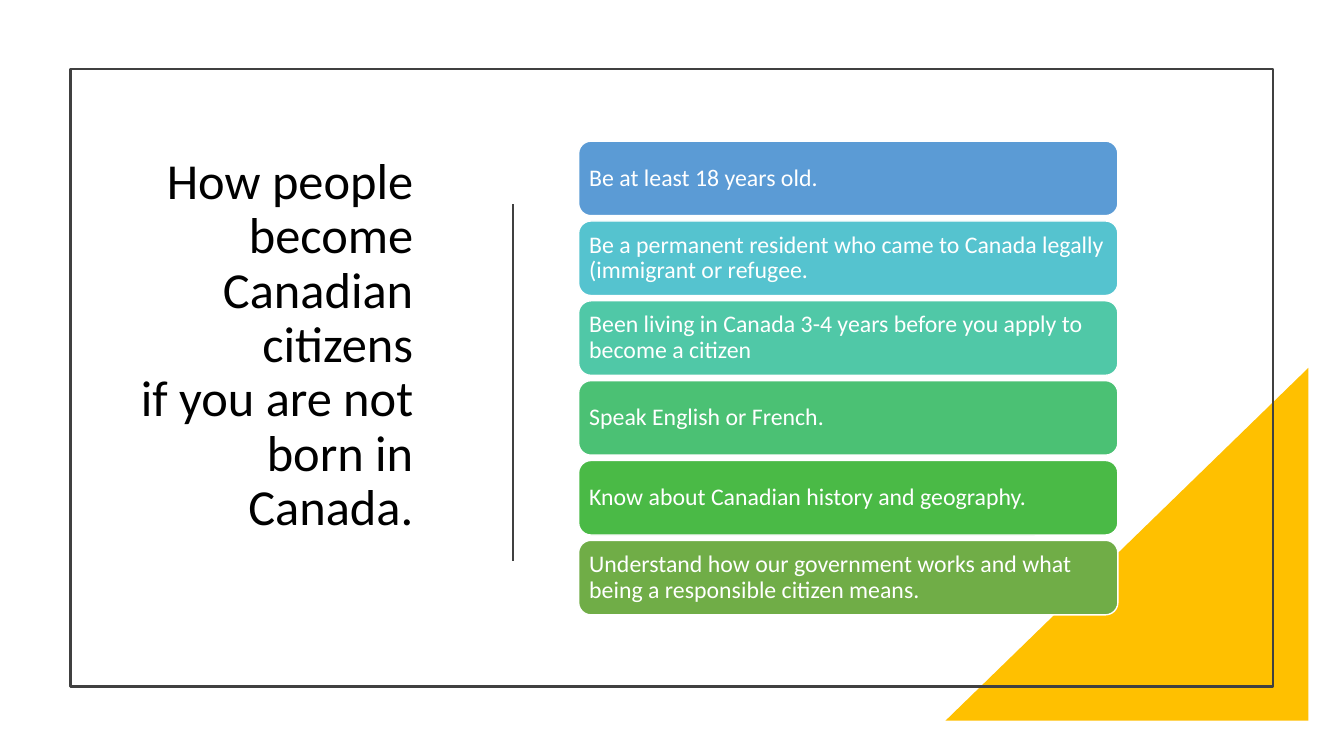
from copy import deepcopy

from pptx import Presentation
from pptx import util as u
from pptx.dml.color import RGBColor
from pptx.enum import shapes, text
from pptx.oxml.ns import qn
from pptx.oxml import parse_xml

DARK = "404040"
WHITE = "FFFFFF"
REQUIREMENTS = [
    ("Be at least 18 years old.", "5B9BD5"),
    ("Be a permanent resident who came to Canada legally (immigrant or refugee.", "55C3CF"),
    ("Been living in Canada 3-4 years before you apply to become a citizen", "50C8A7"),
    ("Speak English or French.", "4BC174"),
    ("Know about Canadian history and geography.", "4ABA46"),
    ("Understand how our government works and what being a responsible citizen means.", "70AD47"),
]


def color(hex_value):
    return RGBColor.from_string(hex_value)


def write(shape, words, size, ink, align, inset=None):
    """Fill a shape with one paragraph; a vertical tab in words breaks the line."""
    frame = shape.text_frame
    frame.word_wrap = True
    frame.auto_size = text.MSO_AUTO_SIZE.NONE
    frame.vertical_anchor = text.MSO_ANCHOR.MIDDLE
    if inset is not None:
        frame.margin_left = frame.margin_right = u.Pt(inset)
        frame.margin_top = frame.margin_bottom = u.Pt(inset)
    para = frame.paragraphs[0]
    para.text = words
    para.alignment = align
    para.line_spacing = 0.9
    for span in para.runs:
        span.font.name = "Calibri"
        span.font.size = u.Pt(size)
        span.font.color.rgb = color(ink)
    for line_break in para._p.findall(qn("a:br")):
        line_break.append(deepcopy(para.runs[0]._r.rPr))


def add_block(page, kind, box, fill=None, line=None, weight=1):
    block = page.shapes.add_shape(kind, *map(u.Pt, box))
    block.shadow.inherit = False
    if fill:
        block.fill.solid()
        block.fill.fore_color.rgb = color(fill)
    else:
        block.fill.background()
    if line:
        block.line.color.rgb = color(line)
        block.line.width = u.Pt(weight)
    else:
        block.line.fill.background()
    return block


def add_backdrop(page, frame_box, corner_box):
    corner = add_block(page, shapes.MSO_SHAPE.RIGHT_TRIANGLE, corner_box, fill="FFC000")
    corner._element.spPr.get_or_add_xfrm().set("flipH", "1")
    add_block(page, shapes.MSO_SHAPE.RECTANGLE, frame_box, line=DARK, weight=1.5)


def add_title(page, box):
    title = page.shapes.title
    title.left, title.top, title.width, title.height = map(u.Pt, box)
    write(title, "How people become Canadian citizens\vif you are not born in Canada.",
          size=36, ink="000000", align=text.PP_ALIGN.RIGHT)


def add_divider(page, x, top, bottom):
    divider = page.shapes.add_connector(
        shapes.MSO_CONNECTOR.STRAIGHT, u.Pt(x), u.Pt(top), u.Pt(x), u.Pt(bottom))
    divider.line.color.rgb = color(DARK)
    divider.line.width = u.Pt(1.5)
    divider._element.spPr.append(parse_xml(
        '<a:effectLst xmlns:a="http://schemas.openxmlformats.org/drawingml/2006/main"/>'))


def add_requirements(page, box, gap=3.75):
    """Stack one rounded bar per requirement, evenly filling the box."""
    left, top, width, height = box
    pitch = (height + gap) / len(REQUIREMENTS)
    for row, (words, fill) in enumerate(REQUIREMENTS):
        bar = add_block(page, shapes.MSO_SHAPE.ROUNDED_RECTANGLE,
                        (left, top + row * pitch, width, pitch - gap), fill, WHITE)
        write(bar, words, size=17, ink=WHITE, align=text.PP_ALIGN.LEFT, inset=5)


def main():
    deck = Presentation()
    deck.slide_width, deck.slide_height = u.Pt(960), u.Pt(540)
    page = deck.slides.add_slide(deck.slide_layouts[5])
    add_backdrop(page, (50.4, 49, 859, 441.4), (675.4, 262.8, 259.2, 252))
    add_title(page, (79.2, 93.6, 223.2, 307.4))
    add_divider(page, 366.5, 146, 401)
    add_requirements(page, (413.3, 100.8, 385.2, 338.4))
    deck.save("out.pptx")


if __name__ == "__main__":
    main()
